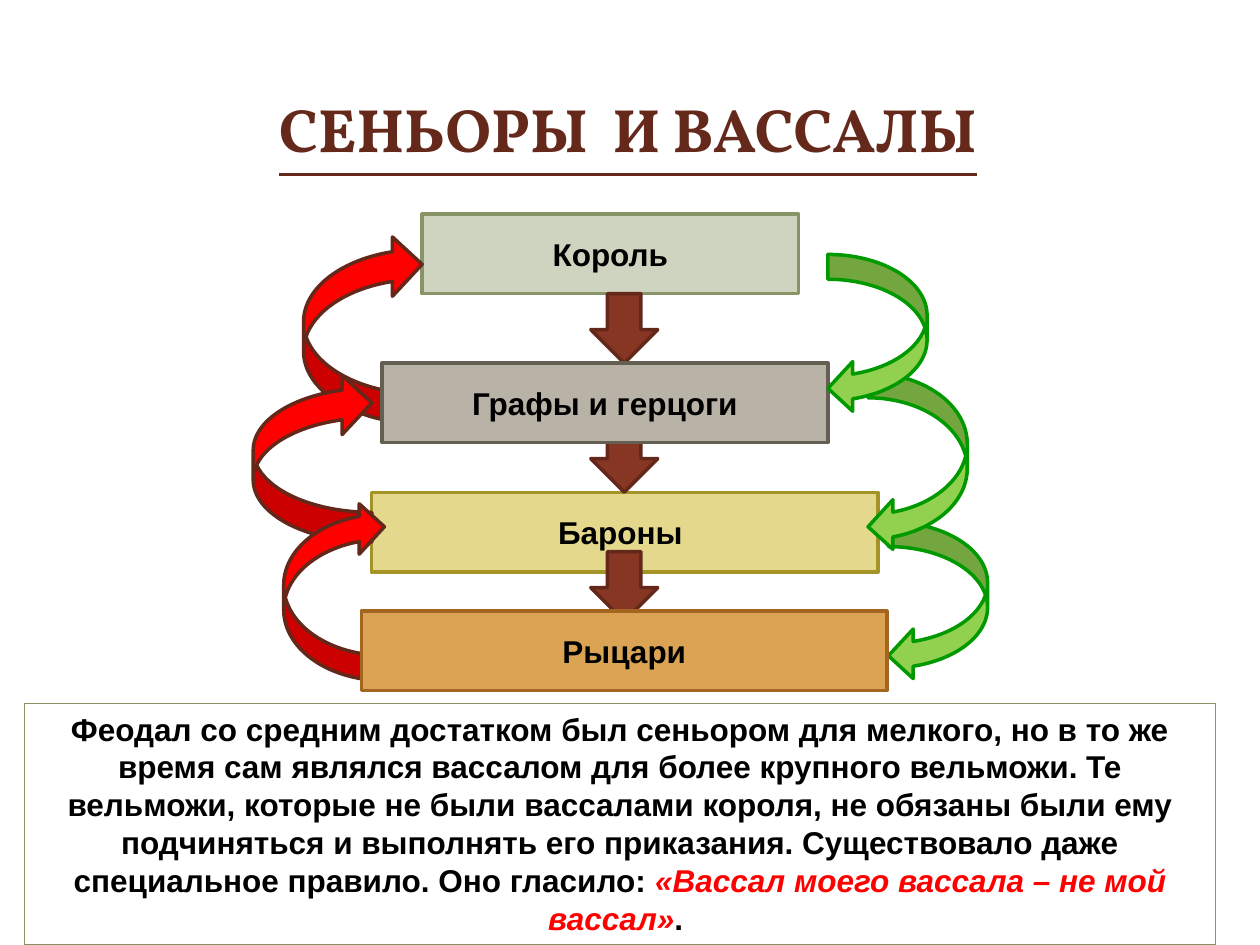
from dataclasses import dataclass

from pptx import Presentation
from pptx.dml.color import RGBColor
from pptx.enum import shapes, text
from pptx.util import Cm, Pt

KIND = shapes.MSO_SHAPE


@dataclass(frozen=True)
class Theme:
    head: str = "Vollkorn"
    body: str = "Arial"
    big: int = 35
    base: int = 18
    wide: float = 2
    thin: float = 0.75
    ink: str = "000000"
    brown: str = "65291B"
    edge: str = "64281B"
    down: str = "873624"
    red: str = "FF0000"
    green: str = "92D050"
    leaf: str = "009900"
    olive: str = "889465"
    king: tuple = ("CED4BF", "889465")
    count: tuple = ("B8B3A6", "655F51")
    baron: tuple = ("E3D88C", "A49428")
    knight: tuple = ("DBA455", "A36520")


T = Theme()


def rgb(code):
    return RGBColor.from_string(code)


def write(para, words, font=T.body, size=T.base, color=T.ink,
          italic=False, under=False):
    """Add one bold run to a centred paragraph."""
    para.alignment = text.PP_ALIGN.CENTER
    run = para.add_run()
    run.text = words
    run.font.name = font
    run.font.size = Pt(size)
    run.font.bold = True
    run.font.italic = italic
    run.font.underline = under
    run.font.color.rgb = rgb(color)


def draw(slide, kind, box, fill, line, width=T.wide, turn=0):
    """Add a preset shape; box is left, top, width, height in cm."""
    shape = slide.shapes.add_shape(kind, *map(Cm, box))
    shape.shadow.inherit = False
    shape.rotation = turn
    if fill:
        shape.fill.solid()
        shape.fill.fore_color.rgb = rgb(fill)
    else:
        shape.fill.background()
    shape.line.color.rgb = rgb(line)
    shape.line.width = Pt(width)
    return shape


def rank(slide, words, left, top, width, colors):
    shape = draw(slide, KIND.RECTANGLE, (left, top, width, 1.6), *colors)
    frame = shape.text_frame
    frame.vertical_anchor = text.MSO_ANCHOR.MIDDLE
    write(frame.paragraphs[0], words)


def rise(slide, *box):
    """Red arrow from vassal up to lord."""
    draw(slide, KIND.CURVED_DOWN_ARROW, box, T.red, T.edge, turn=270)


def fall(slide, left, top, height):
    """Green arrow from lord down to vassal."""
    draw(slide, KIND.CURVED_LEFT_ARROW, (left, top, 2, height),
         T.green, T.leaf)


def title(slide, words):
    shape = slide.shapes.title
    shape.left, shape.top = Cm(1.19), Cm(1.14)
    shape.width, shape.height = Cm(22.94), Cm(2.9)
    frame = shape.text_frame
    frame.vertical_anchor = text.MSO_ANCHOR.MIDDLE
    write(frame.paragraphs[0], words, font=T.head, size=T.big,
          color=T.brown, under=True)


def note(slide):
    shape = draw(slide, KIND.RECTANGLE, (0.5, 14.18, 24, 4.87),
                 None, T.olive, T.thin)
    frame = shape.text_frame
    frame.word_wrap = True
    frame.auto_size = text.MSO_AUTO_SIZE.SHAPE_TO_FIT_TEXT
    frame.vertical_anchor = text.MSO_ANCHOR.TOP
    para = frame.paragraphs[0]
    write(para, "Феодал со средним достатком был сеньором для мелкого, "
                "но в то же время сам являлся вассалом для более крупного "
                "вельможи. Те вельможи, которые не были вассалами короля, "
                "не обязаны были ему подчиняться и выполнять его приказания. "
                "Существовало даже специальное правило. Оно гласило: ")
    write(para, "«Вассал моего вассала – не мой вассал»",
          color=T.red, italic=True)
    write(para, ". ")


def main():
    deck = Presentation()
    deck.slide_width, deck.slide_height = Cm(25.4), Cm(19.05)
    slide = deck.slides.add_slide(deck.slide_layouts[5])
    title(slide, "СЕНЬОРЫ  И ВАССАЛЫ")

    # Later shapes cover the tails of earlier arrows.
    rank(slide, "Король", 8.51, 4.32, 7.59, T.king)
    rank(slide, "Бароны ", 7.49, 9.93, 10.21, T.baron)
    for step in range(3):
        draw(slide, KIND.DOWN_ARROW, (11.91, 5.92 + 2.6 * step, 1.35, 1.4),
             T.down, T.edge)
    rise(slide, 5.41, 5.44, 3.81, 2.39)
    rank(slide, "Графы и герцоги", 7.7, 7.32, 8.99, T.count)
    rise(slide, 4.6, 8.03, 3.4, 2.39)
    rise(slide, 4.93, 10.9, 3.61, 2.03)
    fall(slide, 17.91, 10.52, 3.2)
    fall(slide, 17.5, 7.52, 3.6)
    fall(slide, 16.69, 5.13, 3.2)
    rank(slide, "Рыцари", 7.29, 12.32, 10.59, T.knight)
    note(slide)
    deck.save("out.pptx")


if __name__ == "__main__":
    main()
